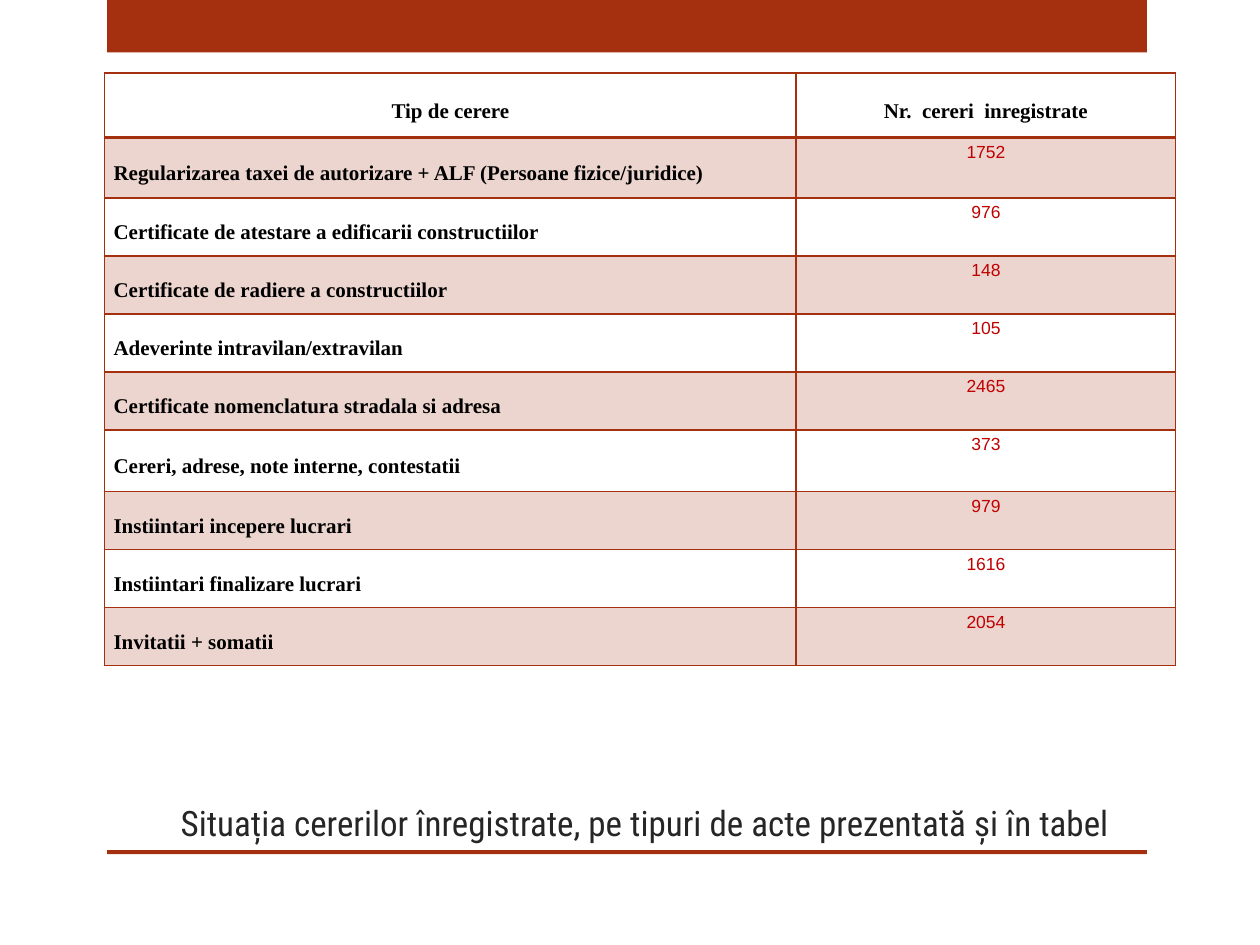
"""Builds a slide with a table of registered requests by type."""
import pptx
import pptx.util
import pptx.dml.color
import pptx.enum.shapes
import pptx.enum.text
import pptx.oxml
import pptx.oxml.ns
from pptx.util import Cm

ACCENT = "A5300F"
ALIGN = pptx.enum.text.PP_ALIGN
ANCHOR = pptx.enum.text.MSO_ANCHOR
NS = pptx.oxml.ns.nsdecls("a")


def color(value):
    return pptx.dml.color.RGBColor.from_string(value)


def style(p, font, size, value, bold, align):
    p.font.name = font
    p.font.size = pptx.util.Pt(size)
    p.font.color.rgb = color(value)
    p.font.bold = bold
    p.alignment = align


prs = pptx.Presentation()
prs.slide_width, prs.slide_height = Cm(25.4), Cm(19.05)
s = prs.slides.add_slide(prs.slide_layouts[5])

for top, height in [(0, 1.06), (17.14, 0.08)]:
    sp = s.shapes.add_shape(pptx.enum.shapes.MSO_SHAPE.RECTANGLE,
                            Cm(2.16), Cm(top), Cm(20.96), Cm(height))
    sp.shadow.inherit = False
    sp.fill.solid()
    sp.fill.fore_color.rgb = color(ACCENT)
    sp.line.fill.background()

title = s.shapes.title
title.left, title.top, title.width, title.height = Cm(2.11), Cm(15.67), Cm(21.79), Cm(1.47)
tf = title.text_frame
tf.text = "Situația cererilor înregistrate, pe tipuri de acte prezentată și în tabel"
tf.word_wrap = True
tf.auto_size = pptx.enum.text.MSO_AUTO_SIZE.NONE
tf.vertical_anchor = ANCHOR.BOTTOM
style(tf.paragraphs[0], "Roboto Condensed", 20, "262626", False, ALIGN.CENTER)

rows = [
    ("Tip de cerere", "Nr.  cereri  inregistrate"),
    ("Regularizarea taxei de autorizare + ALF (Persoane fizice/juridice)", "1752"),
    ("Certificate de atestare a edificarii constructiilor", "976"),
    ("Certificate de radiere a constructiilor", "148"),
    ("Adeverinte intravilan/extravilan", "105"),
    ("Certificate nomenclatura stradala si adresa", "2465"),
    ("Cereri, adrese, note interne, contestatii", "373"),
    ("Instiintari incepere lucrari", "979"),
    ("Instiintari finalizare lucrari", "1616"),
    ("Invitatii + somatii", "2054"),
]
heights = [1.3, 1.22, 1.17, 1.17, 1.17, 1.17, 1.24, 1.17, 1.17, 1.17]
widths = [13.94, 7.65]
table = s.shapes.add_table(len(rows), len(widths), Cm(2.11), Cm(1.47),
                           Cm(sum(widths)), Cm(sum(heights))).table
for column, width in zip(table.columns, widths):
    column.width = Cm(width)

for i, (row, height) in enumerate(zip(rows, heights)):
    table.rows[i].height = Cm(height)
    for j, text in enumerate(row):
        cell = table.cell(i, j)
        cell.text = text
        cell.margin_left = cell.margin_right = Cm(0.18)
        cell.margin_top = cell.margin_bottom = 0
        p = cell.text_frame.paragraphs[0]
        if i > 0 and j == 1:
            cell.vertical_anchor = ANCHOR.TOP
            style(p, "Arial", 10, "C00000", False, ALIGN.CENTER)
            p.line_spacing, p.space_after = 1.25, pptx.util.Pt(6)
        else:
            cell.vertical_anchor = ANCHOR.MIDDLE
            style(p, "Times New Roman", 12, "000000", True,
                  ALIGN.CENTER if i == 0 else ALIGN.LEFT)
            p.line_spacing, p.space_after = 1.5, pptx.util.Pt(9)

        tcPr = cell._tc.get_or_add_tcPr()
        for side in "LRTB":
            thick = (i, side) in [(0, "B"), (1, "T")]
            tcPr.append(pptx.oxml.parse_xml(
                f'<a:ln{side} {NS} w="{25400 if thick else 12700}"><a:solidFill>'
                f'<a:srgbClr val="{ACCENT}"/></a:solidFill></a:ln{side}>'))
        if i % 2:
            cell.fill.solid()
            cell.fill.fore_color.rgb = color(ACCENT)
            tcPr.find(".//{*}solidFill/../{*}solidFill[last()]")
            fill = tcPr.findall(pptx.oxml.ns.qn("a:solidFill"))[0]
            fill[0].append(pptx.oxml.parse_xml(f'<a:alpha {NS} val="20000"/>'))
        else:
            cell.fill.background()

prs.save("out.pptx")
